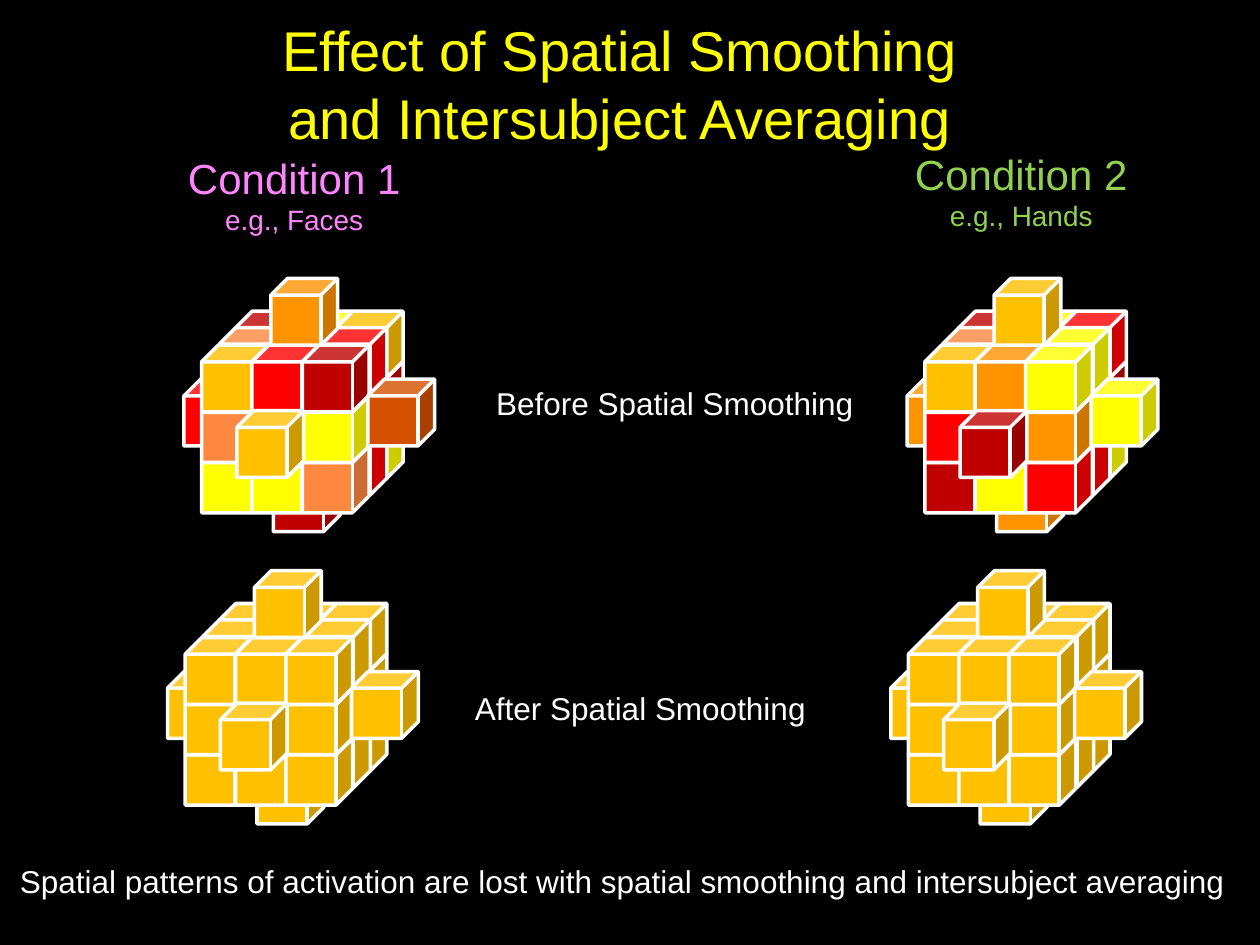
from pptx import Presentation
from pptx.dml.color import RGBColor
from pptx.enum import shapes, text
from pptx.util import Pt

PX = 9144  # EMU per px, 100 px to the inch
WHITE, AMBER = "FFFFFF", "FFC000"
CUBE, PITCH = 53, 40
DEPTH_SHIFT = (0, 14, 27)  # offset of the front, middle and back layers


def rgb(value):
    return RGBColor.from_string(value)


def cube_offsets():
    """Offsets from the front top-left cube, from back to front."""
    visible = [(0, 0), (1, 0), (2, 2), (2, 1), (2, 0)]
    cells = [(col, row, layer) for col, row in visible for layer in (2, 1)]
    cells += [(col, row, 0) for row in (2, 1, 0) for col in range(3)]
    grid = [(col * PITCH + DEPTH_SHIFT[layer], row * PITCH - DEPTH_SHIFT[layer])
            for col, row, layer in cells]
    left, bottom, front, top, right = (
        (-14, 27), (57, 95), (28, 52), (55, -53), (132, 27))
    return [left, bottom, *grid, front, top, right]


class Deck:
    font = "Arial"
    outline = WHITE
    outline_width = 2

    def __init__(self, width, height):
        self.prs = Presentation()
        self.prs.slide_width, self.prs.slide_height = width * PX, height * PX
        self.s = self.prs.slides.add_slide(self.prs.slide_layouts[6])

    def background(self, color):
        fill = self.s.background.fill
        fill.solid()
        fill.fore_color.rgb = rgb(color)

    def label(self, x, y, w, h, lines, color, align=text.PP_ALIGN.LEFT,
              anchor=text.MSO_ANCHOR.TOP, wrap=False):
        """Add a text box; lines holds (words, point size) pairs."""
        sp = self.s.shapes.add_textbox(x * PX, y * PX, w * PX, h * PX)
        tf = sp.text_frame
        tf.word_wrap, tf.vertical_anchor = wrap, anchor
        for i, (words, size) in enumerate(lines):
            p = tf.add_paragraph() if i else tf.paragraphs[0]
            p.text, p.alignment = words, align
            p.font.name, p.font.size = self.font, Pt(size)
            p.font.color.rgb = rgb(color)
        return sp

    def cube(self, parent, x, y, color):
        sp = parent.shapes.add_shape(shapes.MSO_SHAPE.CUBE,
                                     x * PX, y * PX, CUBE * PX, CUBE * PX)
        sp.shadow.inherit = False
        sp.fill.solid()
        sp.fill.fore_color.rgb = rgb(color)
        sp.line.color.rgb = rgb(self.outline)
        sp.line.width = Pt(self.outline_width)

    def voxels(self, x, y, colors):
        """Add a grouped block of cubes; x, y is the front top-left cube."""
        group = self.s.shapes.add_group_shape()
        for (dx, dy), color in zip(cube_offsets(), colors):
            self.cube(group, x + dx, y + dy, color)


# Cube colours in drawing order: left, bottom, hidden layers, front, bumps
FACES = """FF0000 C00000
    C00000 FF8840 FFFF00 FFC02B FFFF00 FF0000 C00000 800000 FFC000 FF0000
    FFFF00 FFFF00 FF8840 FF8840 FFC02B FFFF00 FFC000 FF0000 C00000
    FFC000 FF9300 D45000""".split()
HANDS = """FF9300 FF9300
    C00000 FF8840 FFFF00 FFC02B FFFF00 FF0000 C00000 800000 FF0000 FFFF00
    C00000 FFFF00 FF0000 FF0000 FFC02B FF9300 FFC000 FF9300 FFFF00
    C00000 FFC000 FFFF00""".split()
SMOOTHED = [AMBER] * len(FACES)


def main():
    deck = Deck(1000, 750)
    deck.background("000000")
    center = text.PP_ALIGN.CENTER

    # Title
    deck.label(67, 7, 850, 118,
               [("Effect of Spatial Smoothing\vand Intersubject Averaging", 32)],
               "FFFF00", center, text.MSO_ANCHOR.MIDDLE, wrap=True)

    # Voxel blocks: one column per condition, before above after
    for x, before in ((160, FACES), (734, HANDS)):
        deck.voxels(x, 274, before)
        deck.voxels(x - 13, 506, SMOOTHED)

    # Row labels
    deck.label(384, 300, 306, 40, [("Before Spatial Smoothing", 18)], WHITE)
    deck.label(367, 542, 285, 40, [("After Spatial Smoothing", 18)], WHITE)

    # Column headings
    deck.label(138, 116, 191, 77,
               [("Condition 1", 24), ("e.g., Faces", 16)], "FF85FF", center)
    deck.label(715, 113, 191, 77,
               [("Condition 2", 24), ("e.g., Hands", 16)], "92D050", center)

    # Conclusion
    deck.label(6, 679, 988, 50,
               [("Spatial patterns of activation are lost with spatial smoothing "
                 "and intersubject averaging", 18)], WHITE, wrap=True)

    deck.prs.save("out.pptx")


if __name__ == "__main__":
    main()
